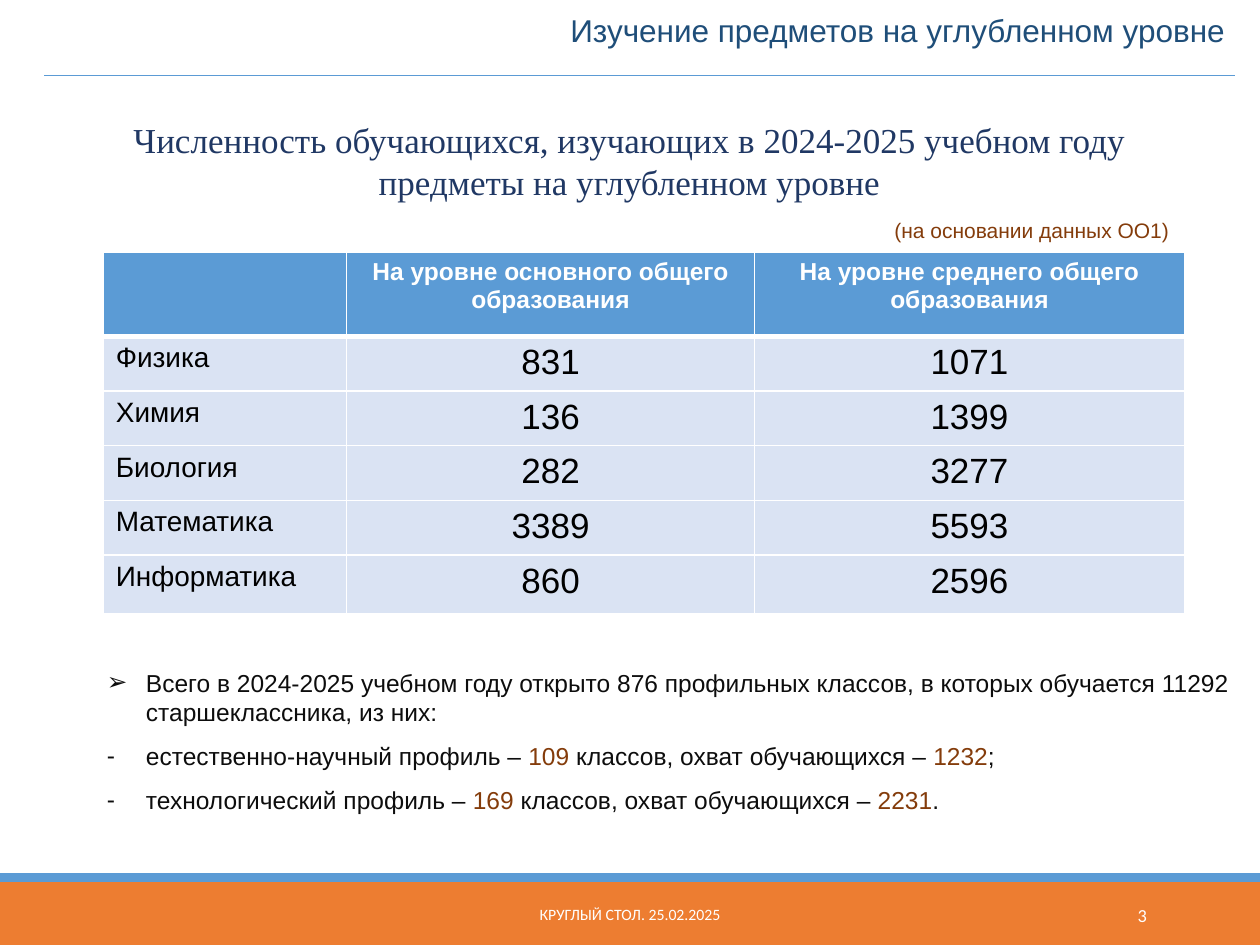
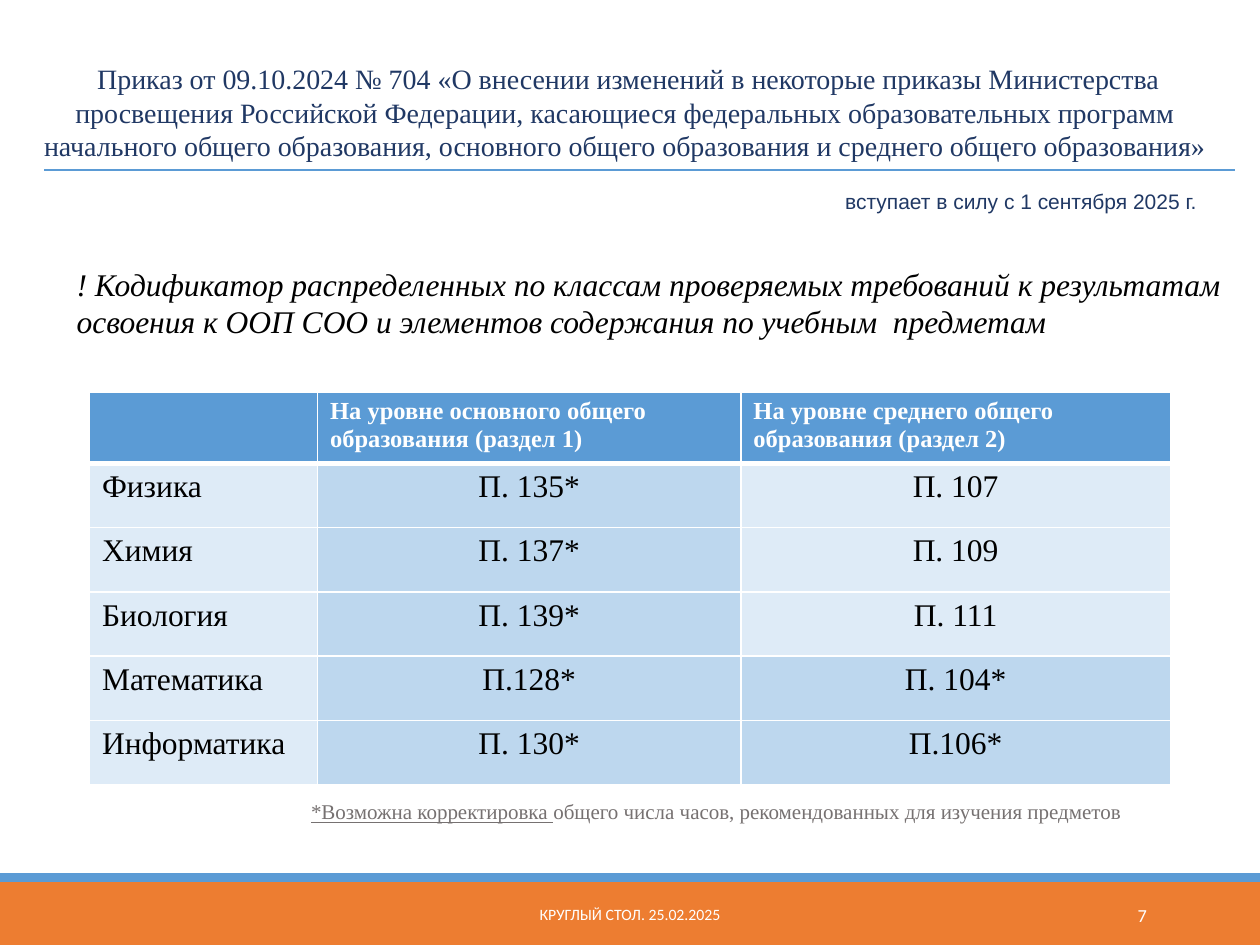
from lxml import etree
from pptx import Presentation
from pptx import util as u
from pptx.dml.color import RGBColor
from pptx.enum import shapes, text
from pptx.oxml import ns

COLORS = {
    "white": "FFFFFF", "black": "000000", "ink": "0D0D0D",
    "blue": "5B9BD5", "orange": "ED7D31", "navy": "203864",
    "title": "1F4E79", "brown": "843C0B", "gray": "767171",
    "lavender": "DAE3F3", "pale": "DEEBF7", "sky": "BDD7EE",
}
SANS, SERIF, FOOTER = "Arial", "Times New Roman", "Calibri"
LEFT, CENTER, RIGHT = text.PP_ALIGN.LEFT, text.PP_ALIGN.CENTER, text.PP_ALIGN.RIGHT
SUBJECTS = ["Физика", "Химия", "Биология", "Математика", "Информатика"]


def color(name):
    return RGBColor.from_string(COLORS[name])


def child(parent, tag, **attributes):
    return etree.SubElement(parent, ns.qn(tag), attributes)


class Deck:
    def __init__(self):
        self.deck = Presentation()
        self.deck.slide_width, self.deck.slide_height = u.Inches(10), u.Inches(7.5)
        self.page = None

    def open_page(self, number):
        """Start a page with the footer bands, caption and page number."""
        self.page = self.deck.slides.add_slide(self.deck.slide_layouts[6])
        self.rectangle(0, 7, 10, 0.5, "orange")
        self.rectangle(0, 6.93, 10, 0.07, "blue")
        for at, words, size, align in [
            ((3.02, 7.06, 3.96, 0.4), "КРУГЛЫЙ СТОЛ. 25.02.2025", 9, CENTER),
            ((8.12, 7.06, 1.08, 0.4), str(number), 10.5, RIGHT),
        ]:
            box = self.text(at, words, size, "white", FOOTER, align)
            box.text_frame.vertical_anchor = text.MSO_ANCHOR.MIDDLE

    def rectangle(self, left, top, width, height, fill):
        box = self.page.shapes.add_shape(
            shapes.MSO_SHAPE.RECTANGLE, *map(u.Inches, (left, top, width, height)))
        box.shadow.inherit = False
        box.fill.solid()
        box.fill.fore_color.rgb = color(fill)
        box.line.fill.background()
        return box

    def style(self, span, size, ink, font, bold=False, italic=False):
        span.font.size, span.font.name = u.Pt(size), font
        span.font.bold, span.font.italic = bold, italic
        span.font.color.rgb = color(ink)

    def spans(self, para, parts, size, font):
        """Add runs from (words, colour) pairs."""
        for words, ink in parts:
            span = para.add_run()
            span.text = words
            self.style(span, size, ink, font)

    def text(self, at, words, size, ink, font, align=LEFT, italic=False):
        box = self.page.shapes.add_textbox(*map(u.Inches, at))
        box.text_frame.word_wrap = True
        box.text_frame.text = words
        para = box.text_frame.paragraphs[0]
        para.alignment = align
        for span in para.runs:
            self.style(span, size, ink, font, italic=italic)
        return box

    def bullets(self, at, items, size, font):
        """Add a list from (bullet, line spacing, parts) items."""
        box = self.page.shapes.add_textbox(*map(u.Inches, at))
        frame = box.text_frame
        frame.word_wrap = True
        for index, (mark, spacing, parts) in enumerate(items):
            para = frame.add_paragraph() if index else frame.paragraphs[0]
            para.line_spacing = spacing
            self.spans(para, parts, size, font)
            props = para._p.get_or_add_pPr()
            props.set("marL", str(u.Inches(0.31)))
            props.set("indent", str(-u.Inches(0.31)))
            child(props, "a:buFont", typeface=font)
            child(props, "a:buChar", char=mark)

    def rule(self, top):
        line = self.page.shapes.add_connector(
            shapes.MSO_CONNECTOR.STRAIGHT, *map(u.Inches, (0.35, top, 9.8, top)))
        line.line.color.rgb = color("blue")
        line.line.width = u.Pt(1)
        child(line._element.spPr, "a:effectLst")

    def borders(self, cell, top, bottom):
        props = cell._tc.get_or_add_tcPr()
        for side, width in [("L", 1), ("R", 1), ("T", top), ("B", bottom)]:
            edge = child(props, "a:ln" + side, w=str(u.Pt(width)))
            child(child(edge, "a:solidFill"), "a:srgbClr", val=COLORS["white"])

    def table(self, left, top, widths, heights, rows, font, sizes, header_align, fill_for):
        """Draw a table; sizes are for the header, subjects and values."""
        frame = self.page.shapes.add_table(
            len(rows), len(widths), u.Inches(left), u.Inches(top),
            u.Inches(sum(widths)), u.Inches(sum(heights)))
        table = frame.table
        table.horz_banding = False
        for column, width in zip(table.columns, widths):
            column.width = u.Inches(width)
        for r, (row, height) in enumerate(zip(rows, heights)):
            table.rows[r].height = u.Inches(height)
            for c, words in enumerate(row):
                cell, header = table.cell(r, c), r == 0
                self.borders(cell, 3 if r == 1 else 1, 3 if header else 1)
                cell.fill.solid()
                cell.fill.fore_color.rgb = color("blue" if header else fill_for(words))
                cell.text_frame.text = words
                para = cell.text_frame.paragraphs[0]
                para.alignment = header_align if header else CENTER if c else LEFT
                size = sizes[0 if header else 2 if c else 1]
                for span in para.runs:
                    self.style(span, size, "white" if header else "black", font, bold=header)


def advanced_study(deck):
    deck.open_page(3)

    # Headings
    deck.text((4.37, 0.04, 5.52, 0.4), "Изучение предметов на углубленном уровне ",
              18, "title", SANS, RIGHT)
    deck.rule(0.6)
    deck.text((0.89, 0.89, 8.21, 0.77),
              "Численность обучающихся, изучающих в 2024-2025 учебном году "
              "предметы на углубленном уровне", 20, "navy", SERIF, CENTER)
    deck.text((7, 1.68, 2.41, 0.3), "(на основании данных ОО1)", 12, "brown", SANS)

    # Student numbers
    header = ("", "На уровне основного общего образования",
              "На уровне среднего общего образования")
    basic = ["831", "136", "282", "3389", "860"]
    senior = ["1071", "1399", "3277", "5593", "2596"]
    deck.table(0.82, 2, [1.93, 3.24, 3.41], [0.67] + [0.41] * 4 + [0.47],
               [header, *zip(SUBJECTS, basic, senior)], SANS, (14, 16, 20), CENTER,
               lambda words: "lavender")

    # Specialised classes
    items = [("➢", 1.0, [("Всего в 2024-2025 учебном году открыто 876 профильных классов, "
                          "в которых обучается 11292 старшеклассника, из них:", "ink")])]
    for profile, classes, students, end in [
        ("естественно-научный", "109", "1232", ";"),
        ("технологический", "169", "2231", "."),
    ]:
        items.append(("-", 1.5, [
            (f"{profile} профиль – ", "ink"), (classes, "brown"),
            (" классов, охват обучающихся – ", "ink"), (students, "brown"), (end, "ink")]))
    deck.bullets((0.75, 5.25, 9.41, 1.28), items, 14, SANS)


def ministry_order(deck):
    deck.open_page(7)

    # Headings
    deck.text((0.12, 0.44, 9.68, 0.91),
              " Приказ от 09.10.2024 № 704 «О внесении изменений в некоторые приказы "
              "Министерства просвещения Российской Федерации, касающиеся федеральных "
              "образовательных программ начального общего образования, основного общего "
              "образования и среднего общего образования»", 16, "navy", SERIF, CENTER)
    deck.rule(1.35)
    deck.text((6.61, 1.45, 3.02, 0.3), "вступает в силу с 1 сентября 2025 г.",
              12, "navy", SANS)
    deck.text((0.51, 2.05, 9.29, 0.71),
              "! Кодификатор распределенных по классам проверяемых требований к результатам "
              "освоения к ООП СОО и элементов содержания по учебным  предметам",
              18, "black", SERIF, italic=True)

    # Order clauses: starred ones are highlighted
    header = ("", "На уровне основного общего образования (раздел 1)",
              "На уровне среднего общего образования (раздел 2)")
    basic = ["П. 135*", "П. 137*", "П. 139*", "П.128*", "П. 130*"]
    senior = ["П. 107", "П. 109", "П. 111", "П. 104*", "П.106*"]
    deck.table(0.71, 3.11, [1.81, 3.36, 3.41], [0.55] + [0.51] * 5,
               [header, *zip(SUBJECTS, basic, senior)], SERIF, (14, 18, 18), LEFT,
               lambda words: "sky" if words.endswith("*") else "pale")

    # Footnote
    note = deck.rectangle(2.37, 6.29, 6.92, 0.3, "white")
    note.text_frame.word_wrap = True
    note.text_frame.vertical_anchor = text.MSO_ANCHOR.TOP
    para = note.text_frame.paragraphs[0]
    para.alignment = LEFT
    deck.spans(para, [
        ("*Возможна корректировка ", "gray"),
        ("общего числа часов, рекомендованных для изучения предметов", "gray")], 12, SERIF)
    para.runs[0].font.underline = True


def main():
    deck = Deck()
    advanced_study(deck)
    ministry_order(deck)
    deck.deck.save("out.pptx")


if __name__ == "__main__":
    main()
